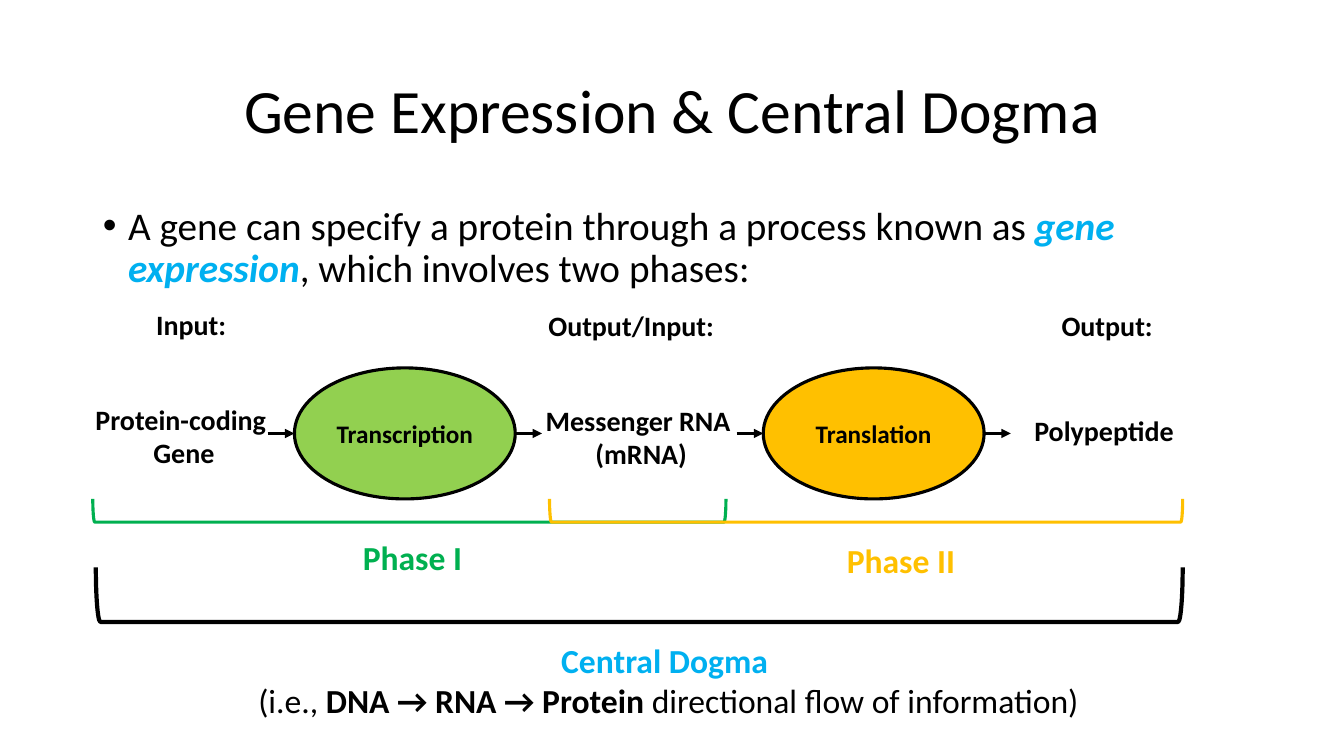
from dataclasses import dataclass

from lxml import etree
from pptx import Presentation
from pptx.dml.color import RGBColor
from pptx.enum.shapes import MSO_CONNECTOR, MSO_SHAPE
from pptx.enum.text import MSO_ANCHOR, MSO_AUTO_SIZE, PP_ALIGN
from pptx.oxml.ns import qn
from pptx.util import Inches, Pt

LINE = MSO_CONNECTOR.STRAIGHT
OVAL = MSO_SHAPE.OVAL
BRACKET = MSO_SHAPE.RIGHT_BRACKET
MIDDLE = MSO_ANCHOR.MIDDLE
TOP = MSO_ANCHOR.TOP
GROW = MSO_AUTO_SIZE.SHAPE_TO_FIT_TEXT
CENTER = PP_ALIGN.CENTER
LEFT = PP_ALIGN.LEFT

BLACK = "000000"
GREEN = "00B050"
GOLD = "FFC000"
BLUE = "00B0F0"
AXIS = 4.3
OVAL_W, OVAL_H = 2.19, 1.3
GAP = 0.265


@dataclass
class Run:
    text: str
    color: str = BLACK
    bold: bool = True
    italic: bool = False


@dataclass
class Label:
    box: tuple[float, float, float, float]
    lines: list[list[Run]]
    size: int = 20
    align: PP_ALIGN = LEFT


@dataclass
class Stage:
    name: str
    left: float
    fill: str
    inset: float


@dataclass
class Span:
    left: float
    top: float
    width: float
    height: float
    color: str
    weight: float


LABELS = [
    Label((1.45, 3, 0.9, 0.44), [[Run("Input:")]]),
    Label((5.34, 3.01, 1.86, 0.44), [[Run("Output/Input:")]]),
    Label((10.43, 3.01, 1.11, 0.44), [[Run("Output:")]]),
    Label((0.84, 3.94, 1.97, 0.77),
          [[Run("Protein-coding ")], [Run("Gene")]], align=CENTER),
    Label((5.3, 3.95, 2.12, 0.77),
          [[Run("Messenger RNA ")], [Run("(mRNA)")]], align=CENTER),
    Label((10.15, 4.05, 1.6, 0.44), [[Run("Polypeptide")]], align=CENTER),
    Label((3.5, 5.28, 1.2, 0.5), [[Run("Phase I", GREEN)]], 24),
    Label((8.3, 5.31, 1.29, 0.5), [[Run("Phase II", GOLD)]], 24),
    Label((2.4, 6.3, 8.46, 0.91), [
        [Run("Central Dogma ", BLUE)],
        [Run("(i.e., ", bold=False), Run("DNA → RNA → Protein "),
         Run("directional flow of information)", bold=False)],
    ], 24, CENTER),
]
STAGES = [
    Stage("Transcription", 2.92, "92D050", 0.04),
    Stage("Translation", 7.57, GOLD, 0.1),
]
SPANS = [
    Span(0.92, 4.95, 6.28, 0.23, GREEN, 2.25),
    Span(5.45, 4.95, 6.28, 0.23, GOLD, 2.25),
    Span(0.95, 5.63, 10.78, 0.54, BLACK, 3),
]


def rgb(code: str) -> RGBColor:
    return RGBColor.from_string(code)


def apply(item, form: dict) -> None:
    for key, value in form.items():
        setattr(item, key, value)


def place(shape, left: float, top: float, width: float, height: float) -> None:
    apply(shape, {"left": Inches(left), "top": Inches(top),
                  "width": Inches(width), "height": Inches(height)})


def write(frame, lines: list[list[Run]], size: int, form: dict) -> None:
    for i, line in enumerate(lines):
        para = frame.paragraphs[0] if i == 0 else frame.add_paragraph()
        apply(para, form)
        for part in line:
            run = para.add_run()
            run.text = part.text
            apply(run.font, {"name": "Calibri", "size": Pt(size),
                             "bold": part.bold, "italic": part.italic})
            run.font.color.rgb = rgb(part.color)


def stroke(line, color: str, weight: float) -> None:
    line.color.rgb = rgb(color)
    line.width = Pt(weight)


def draw_label(slide, label: Label) -> None:
    box = slide.shapes.add_textbox(*map(Inches, label.box))
    apply(box.text_frame, {"word_wrap": False, "auto_size": GROW})
    write(box.text_frame, label.lines, label.size, {"alignment": label.align})


def draw_arrow(slide, start: float) -> None:
    y = Inches(AXIS)
    arrow = slide.shapes.add_connector(
        LINE, Inches(start), y, Inches(start + GAP), y)
    stroke(arrow.line, BLACK, 2.25)
    props = arrow._element.spPr
    etree.SubElement(props.find(qn("a:ln")), qn("a:tailEnd"), type="triangle")
    etree.SubElement(props, qn("a:effectLst"))


def draw_stage(slide, stage: Stage) -> None:
    oval = slide.shapes.add_shape(
        OVAL, Inches(stage.left), Inches(AXIS - OVAL_H / 2),
        Inches(OVAL_W), Inches(OVAL_H))
    oval.shadow.inherit = False
    oval.fill.solid()
    oval.fill.fore_color.rgb = rgb(stage.fill)
    stroke(oval.line, BLACK, 2.25)
    side = Inches(stage.inset)
    apply(oval.text_frame, {"margin_left": side, "margin_right": side,
                            "vertical_anchor": MIDDLE, "word_wrap": True})
    write(oval.text_frame, [[Run(stage.name)]], 18, {"alignment": CENTER})
    draw_arrow(slide, stage.left - GAP)
    draw_arrow(slide, stage.left + OVAL_W)


def draw_span(slide, span: Span) -> None:
    shift = (span.width - span.height) / 2
    mark = slide.shapes.add_shape(
        BRACKET, Inches(span.left + shift), Inches(span.top - shift),
        Inches(span.height), Inches(span.width))
    mark.rotation = 90
    mark.shadow.inherit = False
    mark.fill.background()
    stroke(mark.line, span.color, span.weight)


def fill_heads(slide) -> None:
    title, body = slide.placeholders
    place(title, 0.92, 0.4, 11.5, 1.45)
    title.text_frame.vertical_anchor = MIDDLE
    write(title.text_frame,
          [[Run("Gene Expression & Central Dogma", bold=False)]], 44,
          {"alignment": CENTER, "line_spacing": 0.9})
    place(body, 0.92, 2, 11.5, 4.76)
    body.text_frame.vertical_anchor = TOP
    write(body.text_frame, [[
        Run("A gene can specify a protein through a process known as ",
            bold=False),
        Run("gene expression", BLUE, italic=True),
        Run(", which involves two phases:", bold=False),
    ]], 28, {"line_spacing": 0.9, "space_before": Pt(10)})
    props = body.text_frame.paragraphs[0]._p.get_or_add_pPr()
    props.set("marL", str(Inches(0.25)))
    props.set("indent", str(Inches(-0.25)))


def main() -> None:
    deck = Presentation()
    deck.slide_width = Inches(13.33)
    deck.slide_height = Inches(7.5)
    slide = deck.slides.add_slide(deck.slide_layouts[1])
    fill_heads(slide)
    for stage in STAGES:
        draw_stage(slide, stage)
    for span in SPANS:
        draw_span(slide, span)
    for label in LABELS:
        draw_label(slide, label)
    deck.save("out.pptx")


if __name__ == "__main__":
    main()
